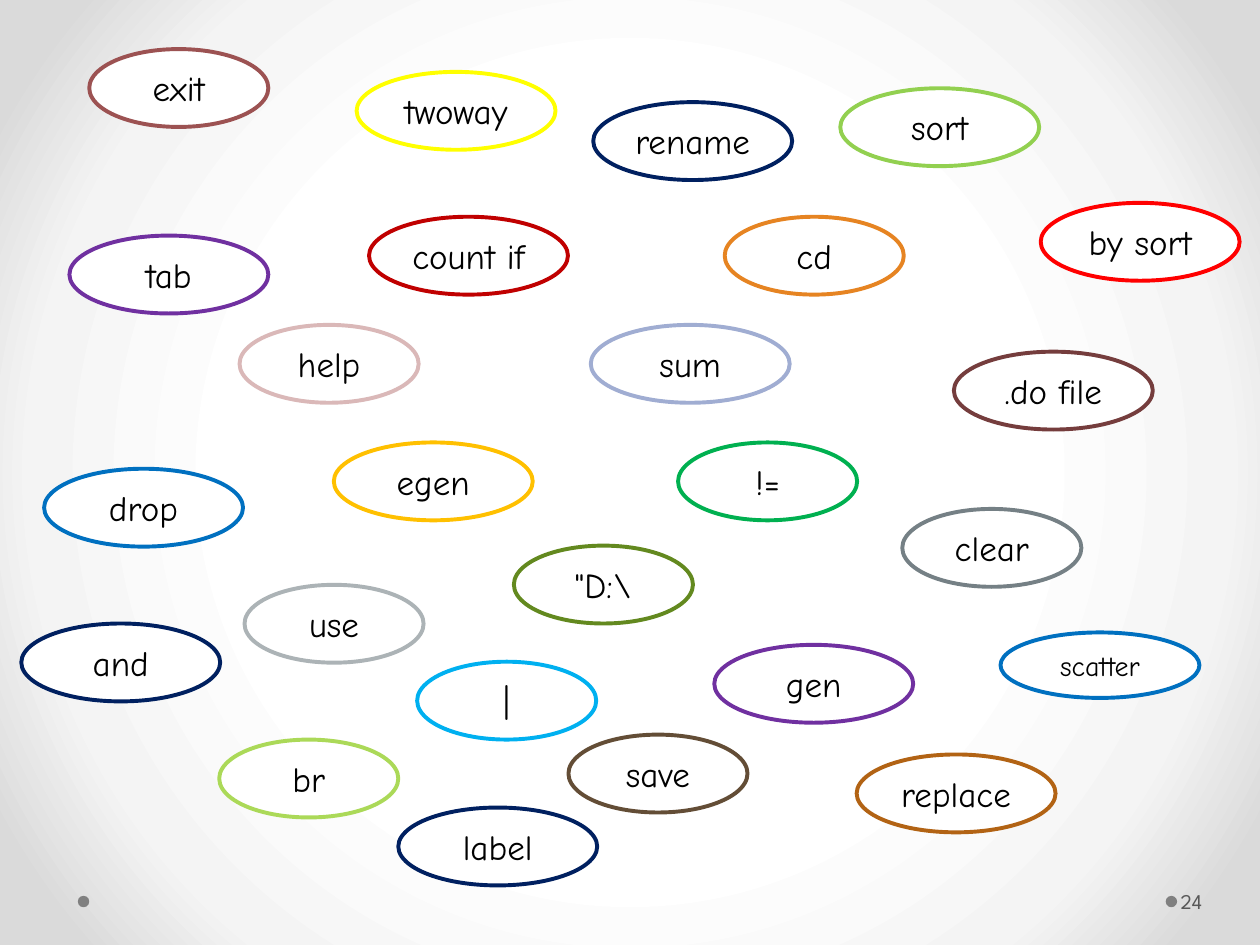
from dataclasses import dataclass

from lxml import etree
from pptx import Presentation
from pptx.dml.color import RGBColor
from pptx.enum.shapes import MSO_SHAPE
from pptx.enum.text import MSO_ANCHOR, MSO_AUTO_SIZE, PP_ALIGN
from pptx.oxml.ns import qn
from pptx.slide import Slide
from pptx.util import Cm, Pt

BUBBLE = MSO_SHAPE.FLOWCHART_CONNECTOR
OVAL = MSO_SHAPE.OVAL
TOP, MIDDLE = MSO_ANCHOR.TOP, MSO_ANCHOR.MIDDLE
CENTER = PP_ALIGN.CENTER
GROW = MSO_AUTO_SIZE.SHAPE_TO_FIT_TEXT

BODY_FONT, NUMBER_FONT = "Comic Neue", "League Spartan"
NARROW, WIDE = 3.61, 4.01
COLOURS = {
    "white": "FFFFFF", "black": "000000", "dot": "808080", "number": "595959",
    "pale grey": "F4F4F4", "edge grey": "DADADA",
    "rosewood": "9C5252", "pink": "DAB8B8", "orange": "E68422", "olive": "63891F",
    "silver": "ACB3B6", "slate": "758085", "lime": "ABD958", "brown": "634D36",
    "copper": "B26314", "maroon": "753D3D", "periwinkle": "A0ADD2",
    "purple": "7030A0", "navy": "002060", "blue": "0070C0", "light green": "92D050",
    "yellow": "FFFF00", "gold": "FFC000", "red": "FF0000", "dark red": "C00000",
    "sky": "00B0F0", "green": "00B050",
}


@dataclass
class Command:
    """A command bubble, with lengths in centimetres."""
    text: str
    left: float
    top: float
    width: float
    outline: str
    height: float = 1.57
    size: int = 20


COMMANDS = [
    Command("exit", 1.8, 0.99, NARROW, "rosewood"),
    Command("help", 4.83, 6.55, NARROW, "pink"),
    Command("cd", 14.61, 4.37, NARROW, "orange"),
    Command('"D:\\', 10.36, 11, NARROW, "olive"),
    Command("use", 4.93, 11.79, NARROW, "silver"),
    Command("clear", 18.19, 10.26, NARROW, "slate"),
    Command("br", 4.42, 14.91, NARROW, "lime"),
    Command("save", 11.46, 14.81, NARROW, "brown"),
    Command("replace", 17.27, 15.21, WIDE, "copper"),
    Command(".do file", 19.23, 7.09, WIDE, "maroon"),
    Command("sum", 11.91, 6.55, WIDE, "periwinkle"),
    Command("tab", 1.4, 4.75, WIDE, "purple"),
    Command("rename", 11.96, 2.06, WIDE, "navy"),
    Command("drop", 0.89, 9.45, WIDE, "blue"),
    Command("sort", 16.94, 1.78, WIDE, "light green"),
    Command("twoway", 7.19, 1.45, WIDE, "yellow"),
    Command("egen", 6.73, 8.92, WIDE, "gold"),
    Command("by sort", 20.98, 4.09, WIDE, "red"),
    Command("count if", 7.44, 4.37, WIDE, "dark red"),
    Command("and", 0.43, 12.57, WIDE, "navy"),
    Command("gen", 14.4, 13, WIDE, "purple"),
    Command("scatter", 20.17, 12.75, WIDE, "blue", height=1.32, size=16),
    Command("|", 8.41, 13.34, NARROW, "sky"),
    Command("!=", 13.67, 8.92, NARROW, "green"),
    Command("label", 8.03, 16.28, WIDE, "navy"),
]


def colour(name: str) -> RGBColor:
    return RGBColor.from_string(COLOURS[name])


def paint_background(slide: Slide) -> None:
    """Fill the background with a gradient that spreads from the centre."""
    slide.background.fill.gradient()
    gradient = slide.element.find(".//" + qn("a:gradFill"))
    for child in list(gradient):
        gradient.remove(child)
    stops = etree.SubElement(gradient, qn("a:gsLst"))
    for percent, name in ((50, "white"), (76, "pale grey"), (92, "edge grey")):
        stop = etree.SubElement(stops, qn("a:gs"), pos=str(percent * 1000))
        etree.SubElement(stop, qn("a:srgbClr"), val=COLOURS[name])
    circle = etree.SubElement(gradient, qn("a:path"), path="circle")
    etree.SubElement(circle, qn("a:fillToRect"),
                     {side: "50000" for side in ("l", "t", "r", "b")})


def add_run(paragraph, text: str, font: str, size: int, name: str) -> None:
    run = paragraph.add_run()
    run.text = text
    run.font.name = font
    run.font.size = Pt(size)
    run.font.color.rgb = colour(name)


def draw_dot(slide: Slide, left: float) -> None:
    dot = slide.shapes.add_shape(OVAL, Cm(left), Cm(18.06), Cm(0.23), Cm(0.23))
    dot.shadow.inherit = False
    dot.fill.solid()
    dot.fill.fore_color.rgb = colour("dot")
    dot.line.fill.background()


def draw_page_number(slide: Slide, text: str) -> None:
    box = slide.shapes.add_textbox(Cm(23.72), Cm(17.65), Cm(1.55), Cm(1.02))
    frame = box.text_frame
    frame.word_wrap = True
    frame.vertical_anchor = MIDDLE
    frame.margin_left = Cm(0.08)
    frame.margin_right = Cm(0.13)
    add_run(frame.paragraphs[0], text, NUMBER_FONT, 12, "number")


def draw_command(slide: Slide, command: Command) -> None:
    shape = slide.shapes.add_shape(BUBBLE, Cm(command.left), Cm(command.top),
                                   Cm(command.width), Cm(command.height))
    shape.shadow.inherit = False
    shape.fill.solid()
    shape.fill.fore_color.rgb = colour("white")
    shape.line.color.rgb = colour(command.outline)
    shape.line.width = Pt(2.25)
    frame = shape.text_frame
    frame.word_wrap = True
    frame.auto_size = GROW
    frame.vertical_anchor = TOP
    paragraph = frame.paragraphs[0]
    paragraph.alignment = CENTER
    add_run(paragraph, command.text, BODY_FONT, command.size, "black")


def main() -> None:
    presentation = Presentation()
    presentation.slide_width, presentation.slide_height = Cm(25.4), Cm(19.05)
    slide = presentation.slides.add_slide(presentation.slide_layouts[6])
    paint_background(slide)

    # Footer dots and page number
    for left in (23.5, 1.57):
        draw_dot(slide, left)
    draw_page_number(slide, "24")

    # Command bubbles
    for command in COMMANDS:
        draw_command(slide, command)

    presentation.save("out.pptx")


if __name__ == "__main__":
    main()
